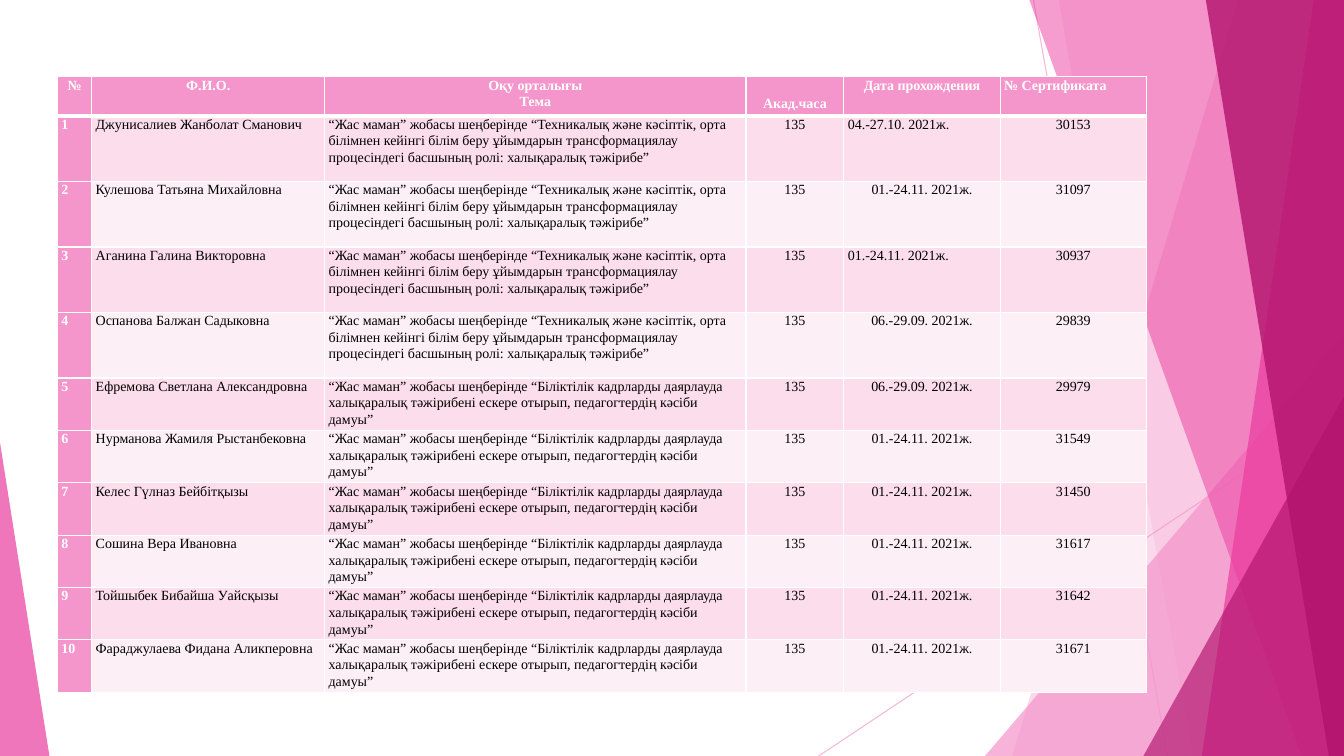
import dataclasses
import typing

import lxml.etree
import pptx
import pptx.dml.color
import pptx.enum.shapes
import pptx.enum.text
import pptx.oxml.ns
import pptx.slide
import pptx.table
import pptx.util

Inches = pptx.util.Inches
ALIGN = pptx.enum.text.PP_ALIGN
ANCHOR = pptx.enum.text.MSO_ANCHOR
COLOURS = {"light": "F496CB", "pink": "EB3D9F", "magenta": "B2136D", "white": "FFFFFF",
           "black": "000000", "odd_row": "FBDDEC", "even_row": "FDEFF6"}
SLIDE_WIDTH, SLIDE_HEIGHT = 13.33, 7.5


@dataclasses.dataclass
class Ray:
    start: tuple[float, float]
    end: tuple[float, float]


@dataclasses.dataclass
class Pane:
    """A full-height pane with a slanted left edge, reaching the right slide edge."""
    top_left: float
    bottom_left: float
    colour: str
    opacity: int


@dataclasses.dataclass
class Wedge:
    """A triangle standing on the bottom slide edge; apex is 0 (left) to 1 (right)."""
    left: float
    width: float
    height: float
    apex: float
    colour: str
    opacity: int


@dataclasses.dataclass
class Trainee:
    name: str
    topic: str
    dates: str
    certificate: str
    date_align: ALIGN = ALIGN.CENTER


RAYS = [Ray((10.25, 0), (11.58, 7.5)), Ray((13.33, 4.03), (8.12, 7.5))]
FACETS = [
    Pane(12.28, 10.04, "light", 36),
    Pane(10.5, 11.83, "light", 20),
    Wedge(9.77, 3.56, 4.17, 1, "light", 72),
    Pane(10.21, 12.91, "pink", 50),
    Pane(13.03, 11.92, "pink", 70),
    Pane(11.96, 13.18, "magenta", 80),
    Wedge(11.34, 1.99, 3.57, 1, "magenta", 66),
    Wedge(0, 0.49, 3.11, 0, "pink", 70),
]

LEADERSHIP = ("“Жас маман” жобасы шеңберінде “Техникалық және кәсіптік, орта білімнен кейінгі "
              "білім беру ұйымдарын трансформациялау процесіндегі басшының ролі: "
              "халықаралық тәжірибе”")
TEACHING = ("“Жас маман” жобасы шеңберінде “Біліктілік кадрларды даярлауда халықаралық "
            "тәжірибені ескере отырып, педагогтердің кәсіби дамуы”")
SEPTEMBER, NOVEMBER = "06.-29.09. 2021ж.", "01.-24.11. 2021ж."
HOURS = "135"
TRAINEES = [
    Trainee("Джунисалиев Жанболат Сманович", LEADERSHIP, "04.-27.10. 2021ж.", "30153", ALIGN.LEFT),
    Trainee("Кулешова Татьяна Михайловна", LEADERSHIP, NOVEMBER, "31097"),
    Trainee("Аганина Галина Викторовна", LEADERSHIP, NOVEMBER, "30937", ALIGN.LEFT),
    Trainee("Оспанова Балжан Садыковна", LEADERSHIP, SEPTEMBER, "29839"),
    Trainee("Ефремова Светлана Александровна", TEACHING, SEPTEMBER, "29979"),
    Trainee("Нурманова Жамиля Рыстанбековна", TEACHING, NOVEMBER, "31549"),
    Trainee("Келес Гүлназ Бейбітқызы", TEACHING, NOVEMBER, "31450"),
    Trainee("Сошина Вера Ивановна", TEACHING, NOVEMBER, "31617"),
    Trainee("Тойшыбек Бибайша Уайсқызы", TEACHING, NOVEMBER, "31642"),
    Trainee("Фараджулаева Фидана Аликперовна", TEACHING, NOVEMBER, "31671"),
]
HEADINGS = ["№", "Ф.И.О.", "Оқу орталығы\nТема", "Акад.часа", "Дата прохождения", "№ Сертификата"]
HOURS_COLUMN = HEADINGS.index("Акад.часа")
COLUMN_WIDTHS = [0.34, 2.31, 4.18, 0.97, 1.55, 1.45]
ROW_HEIGHTS = [0.39] + [0.65 if trainee.topic == LEADERSHIP else 0.52 for trainee in TRAINEES]


def rgb(colour: str) -> pptx.dml.color.RGBColor:
    return pptx.dml.color.RGBColor.from_string(COLOURS[colour])


def apply_format(target: typing.Any, values: dict[str, typing.Any]) -> None:
    for attribute, value in values.items():
        setattr(target, attribute, value)


def add_opacity(owner: typing.Any, percent: int) -> None:
    """Make the solid colour of a fill or line translucent."""
    for colour in owner.iter(pptx.oxml.ns.qn("a:srgbClr")):
        lxml.etree.SubElement(colour, pptx.oxml.ns.qn("a:alpha"), val=str(percent * 1000))


def draw_ray(slide: pptx.slide.Slide, ray: Ray) -> None:
    ends = [Inches(value) for value in (*ray.start, *ray.end)]
    line = slide.shapes.add_connector(pptx.enum.shapes.MSO_CONNECTOR.STRAIGHT, *ends)
    line.line.width = pptx.util.Pt(0.75)
    line.line.color.rgb = rgb("light")
    properties = line._element.spPr
    add_opacity(properties, 70)
    lxml.etree.SubElement(properties, pptx.oxml.ns.qn("a:effectLst"))


def draw_facet(slide: pptx.slide.Slide, facet: Pane | Wedge) -> None:
    if isinstance(facet, Pane):
        corners = [(SLIDE_WIDTH, 0), (SLIDE_WIDTH, SLIDE_HEIGHT), (facet.bottom_left, SLIDE_HEIGHT)]
        outline = slide.shapes.build_freeform(Inches(facet.top_left), 0)
        outline.add_line_segments([(Inches(x), Inches(y)) for x, y in corners], close=True)
        shape = outline.convert_to_shape()
    else:
        shape = slide.shapes.add_shape(
            pptx.enum.shapes.MSO_SHAPE.ISOSCELES_TRIANGLE, Inches(facet.left),
            Inches(SLIDE_HEIGHT - facet.height), Inches(facet.width), Inches(facet.height))
        shape.adjustments[0] = facet.apex
    shape.shadow.inherit = False
    shape.line.fill.background()
    shape.fill.solid()
    shape.fill.fore_color.rgb = rgb(facet.colour)
    add_opacity(shape._element.spPr, facet.opacity)


def add_borders(cell: pptx.table._Cell, row: int) -> None:
    """Rule the cell in white, with a thicker rule between heading and body."""
    widths = {"L": 1, "R": 1, "T": 3 if row == 1 else 1, "B": 3 if row == 0 else 1}
    properties = cell._tc.get_or_add_tcPr()
    for side, width in widths.items():
        border = lxml.etree.SubElement(properties, pptx.oxml.ns.qn(f"a:ln{side}"),
                                       w=str(pptx.util.Pt(width)))
        fill = lxml.etree.SubElement(border, pptx.oxml.ns.qn("a:solidFill"))
        lxml.etree.SubElement(fill, pptx.oxml.ns.qn("a:srgbClr"), val=COLOURS["white"])


def fill_cell(cell: pptx.table._Cell, row: int, column: int, text: str, align: ALIGN) -> None:
    is_heading = row == 0 or column == 0
    apply_format(cell, {"text": text, "margin_left": Inches(0.04), "margin_right": Inches(0.04),
                        "margin_top": 0, "margin_bottom": 0})
    if row == 0 and column == HOURS_COLUMN:
        apply_format(cell, {"vertical_anchor": ANCHOR.BOTTOM, "margin_bottom": Inches(0.04)})
    add_borders(cell, row)
    cell.fill.solid()
    cell.fill.fore_color.rgb = rgb("light" if is_heading else "odd_row" if row % 2 else "even_row")
    for paragraph in cell.text_frame.paragraphs:
        apply_format(paragraph, {"alignment": align, "line_spacing": 1.07})
        for run in paragraph.runs:
            apply_format(run.font, {"name": "Times New Roman", "size": pptx.util.Pt(10),
                                    "bold": is_heading})
            run.font.color.rgb = rgb("white" if is_heading else "black")


def draw_certificates(slide: pptx.slide.Slide) -> None:
    certificates = slide.shapes.add_table(
        len(ROW_HEIGHTS), len(COLUMN_WIDTHS), Inches(0.57), Inches(0.76),
        Inches(sum(COLUMN_WIDTHS)), Inches(sum(ROW_HEIGHTS))).table
    apply_format(certificates, {"first_col": True, "horz_banding": False})
    for column, width in zip(certificates.columns, COLUMN_WIDTHS):
        column.width = Inches(width)
    for row, height in zip(certificates.rows, ROW_HEIGHTS):
        row.height = Inches(height)

    for column, heading in enumerate(HEADINGS):
        align = ALIGN.LEFT if heading == HEADINGS[-1] else ALIGN.CENTER
        fill_cell(certificates.cell(0, column), 0, column, heading, align)
    for row, trainee in enumerate(TRAINEES, start=1):
        texts = [str(row), trainee.name, trainee.topic, HOURS, trainee.dates, trainee.certificate]
        aligns = [ALIGN.LEFT] * 3 + [ALIGN.CENTER, trainee.date_align, ALIGN.CENTER]
        for column, (text, align) in enumerate(zip(texts, aligns)):
            fill_cell(certificates.cell(row, column), row, column, text, align)


def main() -> None:
    presentation = pptx.Presentation()
    apply_format(presentation, {"slide_width": Inches(SLIDE_WIDTH),
                                "slide_height": Inches(SLIDE_HEIGHT)})
    slide = presentation.slides.add_slide(presentation.slide_layouts[6])
    for ray in RAYS:
        draw_ray(slide, ray)
    for facet in FACETS:
        draw_facet(slide, facet)
    draw_certificates(slide)
    presentation.save("out.pptx")


if __name__ == "__main__":
    main()
